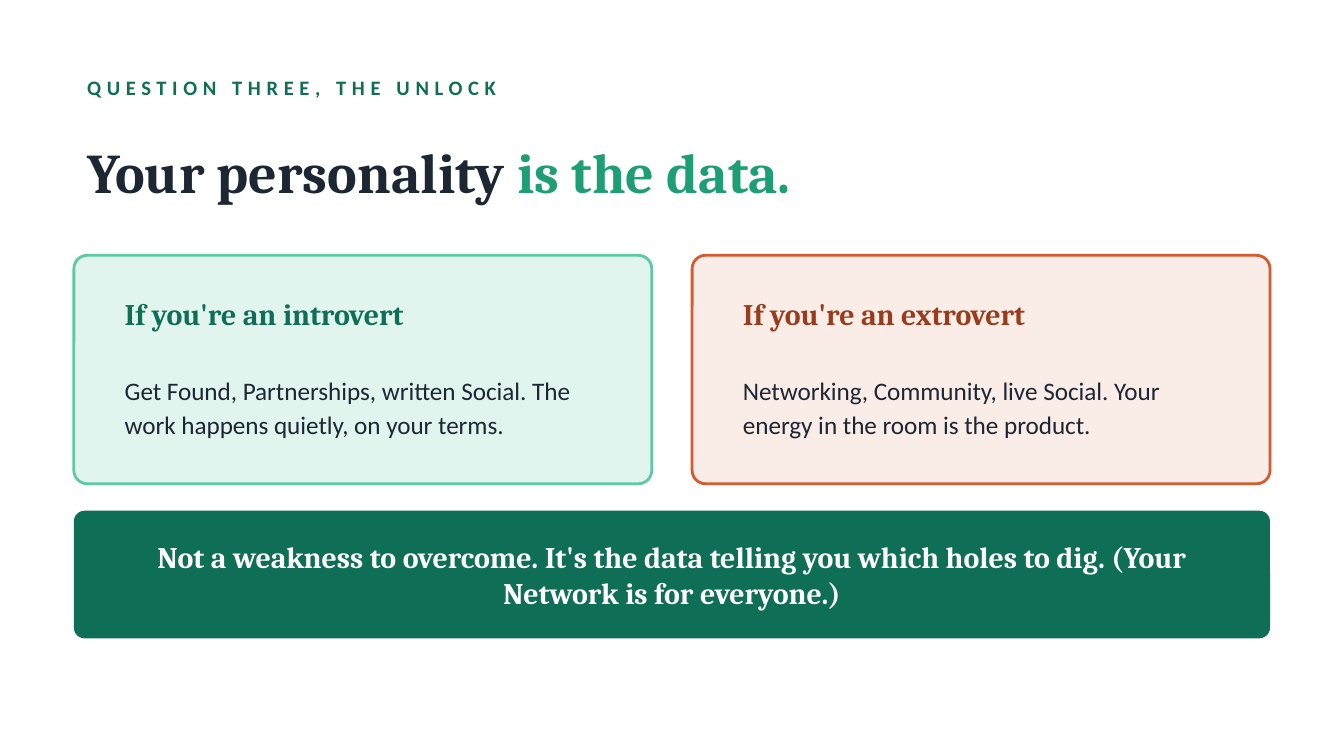
import pptx
import pptx.dml.color
import pptx.enum.shapes
import pptx.enum.text
import pptx.util

EMU_PER_PX = 4572  # 200 px to the inch
HEADING_FONT = "Cambria"
BODY_FONT = "Calibri"
INK = "1C2733"
DARK_GREEN = "0F6E56"
GREEN = "1D9E75"
WHITE = "FFFFFF"

MARGIN = 110
CONTENT_WIDTH = 1780
CARD_TOP = 380
CARD_WIDTH = 860
CARD_HEIGHT = 340
CARD_GAP = 60
CARD_PADDING = 56
CARD_TEXT_WIDTH = 760

CARDS = [
    ("If you're an introvert",
     "Get Found, Partnerships, written Social. The work happens quietly, on your terms.",
     "E1F5EE", "5DCAA5", DARK_GREEN),
    ("If you're an extrovert",
     "Networking, Community, live Social. Your energy in the room is the product.",
     "FAECE7", "D85A30", "993C1D"),
]


def px(length):
    return pptx.util.Emu(length * EMU_PER_PX)


def color(hex_string):
    return pptx.dml.color.RGBColor.from_string(hex_string)


class SlideBuilder:
    """Holds the text style and the slide being built."""

    def __init__(self, slide):
        self.slide = slide
        slide.background.fill.solid()
        slide.background.fill.fore_color.rgb = color(WHITE)

    def set_text(self, shape, runs, size, font_name, bold, align="LEFT", line_spacing=None, tracking=0):
        """Fill a shape with one paragraph of (text, colour) runs; tracking is in points."""
        frame = shape.text_frame
        frame.word_wrap = True
        frame.auto_size = pptx.enum.text.MSO_AUTO_SIZE.NONE
        frame.vertical_anchor = pptx.enum.text.MSO_ANCHOR.MIDDLE
        paragraph = frame.paragraphs[0]
        paragraph.alignment = pptx.enum.text.PP_ALIGN[align]
        if line_spacing:
            paragraph.line_spacing = line_spacing
        paragraph.font.size = pptx.util.Pt(size)
        paragraph.font.name = font_name
        paragraph.font.bold = bold
        for text, hex_string in runs:
            run = paragraph.add_run()
            run.text = text
            run.font.color.rgb = color(hex_string)
            if tracking:
                run.font._element.set("spc", str(tracking * 100))

    def title(self, left, top, width, height, runs, size):
        title = self.slide.shapes.title
        title.left, title.top, title.width, title.height = map(px, (left, top, width, height))
        self.set_text(title, runs, size, HEADING_FONT, True)

    def text(self, left, top, width, height, text, text_color, size,
             font_name=HEADING_FONT, bold=True, **paragraph_style):
        box = self.slide.shapes.add_textbox(*map(px, (left, top, width, height)))
        self.set_text(box, [(text, text_color)], size, font_name, bold, **paragraph_style)

    def panel(self, left, top, width, height, radius, fill, line=None):
        panel = self.slide.shapes.add_shape(
            pptx.enum.shapes.MSO_SHAPE.ROUNDED_RECTANGLE, *map(px, (left, top, width, height)))
        panel.shadow.inherit = False
        panel.adjustments[0] = radius / min(width, height)
        panel.fill.solid()
        panel.fill.fore_color.rgb = color(fill)
        if line:
            panel.line.color.rgb = color(line)
            panel.line.width = pptx.util.Pt(1.5)
        else:
            panel.line.fill.background()

    def card(self, left, heading, body, fill, line, heading_color):
        self.panel(left, CARD_TOP, CARD_WIDTH, CARD_HEIGHT, 20, fill, line)
        text_left = left + CARD_PADDING
        self.text(text_left, CARD_TOP + 36, CARD_TEXT_WIDTH, 100, heading, heading_color, 16)
        self.text(text_left, CARD_TOP + 144, CARD_TEXT_WIDTH, 160, body, INK, 13.5,
                  BODY_FONT, False, line_spacing=1.1)


def main():
    presentation = pptx.Presentation()
    presentation.slide_width = px(2000)
    presentation.slide_height = px(1125)
    title_only = presentation.slide_layouts[5]
    builder = SlideBuilder(presentation.slides.add_slide(title_only))

    builder.text(MARGIN, 100, CONTENT_WIDTH, 60, "QUESTION THREE, THE UNLOCK",
                 DARK_GREEN, 11, BODY_FONT, tracking=3)
    builder.title(MARGIN, 170, CONTENT_WIDTH, 170,
                  [("Your personality ", INK), ("is the data.", GREEN)], 30)

    for index, card in enumerate(CARDS):
        builder.card(MARGIN + index * (CARD_WIDTH + CARD_GAP), *card)

    builder.panel(MARGIN, 760, CONTENT_WIDTH, 190, 16, DARK_GREEN)
    builder.text(MARGIN + 50, 760, CONTENT_WIDTH - 100, 190,
                 "Not a weakness to overcome. It's the data telling you which holes to dig. "
                 "(Your Network is for everyone.)", WHITE, 16, align="CENTER")

    presentation.save("out.pptx")


if __name__ == "__main__":
    main()
